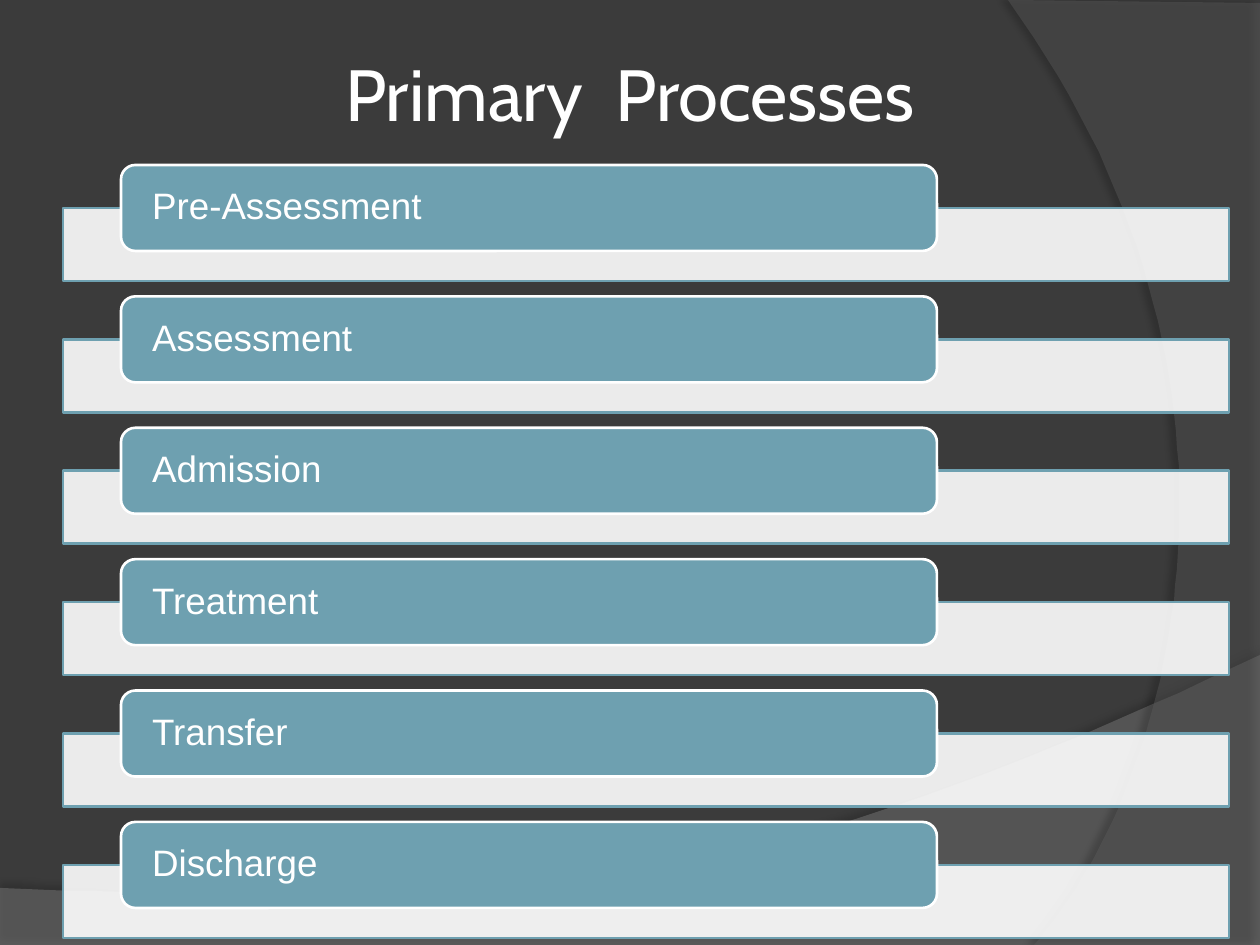
from lxml.etree import SubElement
from pptx import Presentation
from pptx.dml.color import RGBColor
from pptx.enum.shapes import MSO_SHAPE
from pptx.enum.text import MSO_ANCHOR, MSO_AUTO_SIZE, PP_ALIGN
from pptx.oxml.ns import qn
from pptx.util import Pt

PX = 914400 // 126

TITLE = "Primary  Processes"
STEPS = ["Pre-Assessment", "Assessment", "Admission",
         "Treatment", "Transfer", "Discharge"]

DARK, WHITE, TEAL = "3B3B3B", "FFFFFF", "6EA0B0"

# Each swoosh: straight points, then a Bezier curve from the last of them.
SWOOSHES = [
    dict(line=[(0, 888), (0, 946), (1260, 946), (1260, 655)],
         curve=[(704, 919), (493, 906), (0, 888)],
         fill="7F7F7F", alpha=45, shade=35, dist=3.5, angle=270),
    dict(line=[(1260, 3), (1260, 945), (1034, 945)],
         curve=[(1178, 780), (1283, 378), (1008, 0)],
         fill="5E5E5E", alpha=40, shade=45, dist=4, angle=180),
]

TOP, SPAN = 165, 657            # first pill, and from there to the last one
BAR = dict(left=63, drop=43, width=1166, height=73)
PILL = dict(left=121, drop=0, width=816, height=86)


def color(code):
    return RGBColor.from_string(code)


def paint(shape, code, alpha=100):
    shape.fill.solid()
    shape.fill.fore_color.rgb = color(code)
    if alpha < 100:
        tone = shape.fill._xPr.find(qn("a:solidFill"))[0]
        SubElement(tone, qn("a:alpha"), val=str(alpha * 1000))


def bend(start, one, two, end, count=60):
    """Points along a cubic Bezier curve, without its start."""
    for i in range(1, count + 1):
        t = i / count
        s = 1 - t
        yield tuple(s**3 * a + 3 * s * s * t * b + 3 * s * t * t * c + t**3 * d
                    for a, b, c, d in zip(start, one, two, end))


def cast(shape, shade, dist, angle):
    """Give the shape a soft outer shadow."""
    shape.shadow.inherit = False
    effects = shape._element.spPr.find(qn("a:effectLst"))
    outer = SubElement(effects, qn("a:outerShdw"), blurRad=str(Pt(4)),
                       dist=str(Pt(dist)), dir=str(angle * 60000),
                       algn="ctr", rotWithShape="0")
    tone = SubElement(outer, qn("a:srgbClr"), val="000000")
    SubElement(tone, qn("a:alpha"), val=str(shade * 1000))


def swoosh(shapes, line, curve, fill, alpha, **shadow):
    points = line + list(bend(line[-1], *curve))
    form = shapes.build_freeform(*points[0], scale=PX)
    form.add_line_segments(points[1:], close=True)
    shape = form.convert_to_shape()
    paint(shape, fill, alpha)
    shape.line.fill.background()
    cast(shape, **shadow)


def box(shapes, kind, top, size, fill, edge, alpha=100):
    shape = shapes.add_shape(kind, *(round(v * PX) for v in (
        size["left"], top + size["drop"], size["width"], size["height"])))
    paint(shape, fill, alpha)
    shape.line.color.rgb = color(edge)
    shape.line.width = Pt(1.5)
    shape.shadow.inherit = False
    return shape


def write(shape, text, font, size, align, side, **para):
    frame = shape.text_frame
    frame.text = text
    first = frame.paragraphs[0]
    look = dict(word_wrap=True, auto_size=MSO_AUTO_SIZE.NONE,
                vertical_anchor=MSO_ANCHOR.MIDDLE,
                margin_left=side * PX, margin_right=side * PX,
                margin_top=0, margin_bottom=0)
    for part, values in ((frame, look), (first, dict(alignment=align, **para)),
                         (first.runs[0].font, dict(name=font, size=Pt(size)))):
        for name, value in values.items():
            setattr(part, name, value)
    first.runs[0].font.color.rgb = color(WHITE)


def main():
    deck = Presentation()
    deck.slide_width, deck.slide_height = 1260 * PX, 945 * PX
    slide = deck.slides.add_slide(deck.slide_layouts[5])
    paint(slide.background, DARK)
    shapes = slide.shapes

    for item in SWOOSHES:
        swoosh(shapes, **item)

    title = shapes.title
    shapes._spTree.append(title._element)       # in front of the swooshes
    for name, value in dict(left=63, top=38, width=1134, height=110).items():
        setattr(title, name, value * PX)
    write(title, TITLE, "Cabin", 41.4, PP_ALIGN.CENTER, 6)

    for i, step in enumerate(STEPS):
        top = TOP + i * SPAN / (len(STEPS) - 1)
        box(shapes, MSO_SHAPE.RECTANGLE, top, BAR, WHITE, TEAL, 90)
        pill = box(shapes, MSO_SHAPE.ROUNDED_RECTANGLE, top, PILL, TEAL, WHITE)
        write(pill, step, "Arial", 21, PP_ALIGN.LEFT, 27, line_spacing=0.9)

    deck.save("out.pptx")


if __name__ == "__main__":
    main()
